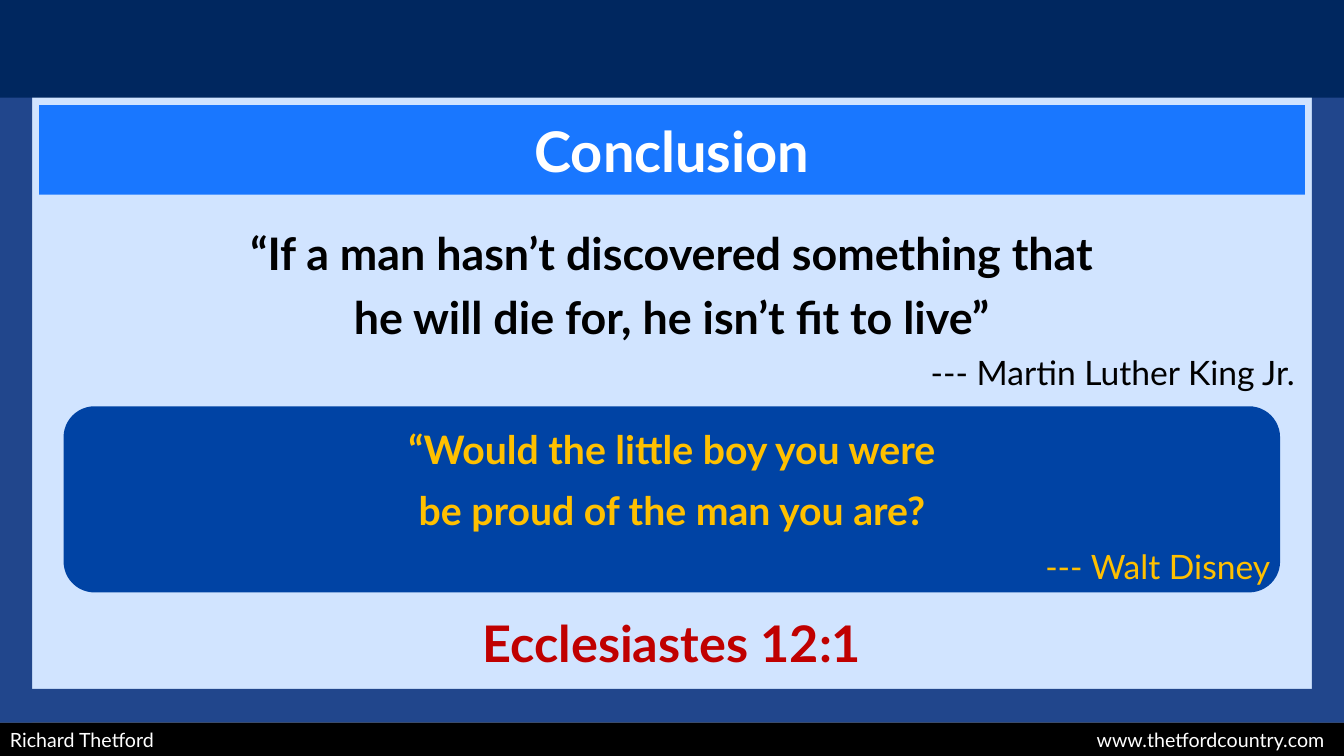
"""Build the conclusion slide with its quotations and scripture reference."""
from pptx import Presentation
from pptx.dml.color import RGBColor
from pptx.enum.shapes import MSO_SHAPE as Shape
from pptx.enum.text import MSO_ANCHOR as Anchor, MSO_AUTO_SIZE as AutoSize, PP_ALIGN as Align
from pptx.oxml import parse_xml
from pptx.oxml.ns import nsdecls
from pptx.util import Pt

WHITE = RGBColor(0xFF, 0xFF, 0xFF)
BLACK = RGBColor(0x00, 0x00, 0x00)
PALE_BLUE = RGBColor(0xD1, 0xE4, 0xFF)
FRAME_BLUE = RGBColor(0x21, 0x46, 0x8C)
NAVY = RGBColor(0x00, 0x27, 0x5F)
BRIGHT_BLUE = RGBColor(0x19, 0x77, 0xFF)
PANEL_BLUE = RGBColor(0x00, 0x43, 0xA4)
GOLD = RGBColor(0xFF, 0xC0, 0x00)
RED = RGBColor(0xC0, 0x00, 0x00)

WIDTH, HEIGHT = 960, 540
SIDE = 23
FOOTER_TOP = 516
FOOTER_TAB = 939
CONTENT_LEFT, CONTENT_WIDTH = 28, 904
PANEL = (45.4, 290.2, 869, 133)


def fill_solid(target, color):
    """Give a shape or background a solid fill."""
    target.fill.solid()
    target.fill.fore_color.rgb = color


def add_block(slide, kind, box, color):
    """Add a plain filled shape without outline or shadow."""
    shape = slide.shapes.add_shape(kind, *map(Pt, box))
    fill_solid(shape, color)
    shape.line.fill.background()
    shape.shadow.inherit = False
    return shape


def write_paragraph(paragraph, text, align, spacing=1.0, **font_values):
    """Write a paragraph and format each of its runs."""
    paragraph.text = text
    paragraph.alignment = align
    paragraph.line_spacing = spacing
    color = font_values.pop("color")
    for run in paragraph.runs:
        for name, value in {"name": "Lato", **font_values}.items():
            setattr(run.font, name, value)
        run.font.color.rgb = color


def add_text(slide, box):
    """Add a wrapping text box and return its text frame."""
    frame = slide.shapes.add_textbox(*map(Pt, box)).text_frame
    frame.word_wrap = True
    return frame


def add_quotation(slide, box, quotation, speaker, size, color, spacing):
    """Add a centred bold quotation with its speaker at the right."""
    frame = add_text(slide, box)
    write_paragraph(frame.paragraphs[0], quotation, Align.CENTER, spacing,
                    size=Pt(size), bold=True, color=color)
    write_paragraph(frame.add_paragraph(), f"--- {speaker}", Align.RIGHT, spacing,
                    size=Pt(24), bold=False, color=color)


def set_title(slide, text):
    """Place and format the title on its coloured bar."""
    title = slide.shapes.title
    box = (CONTENT_LEFT, 75, CONTENT_WIDTH, 64)
    for name, value in zip(("left", "top", "width", "height"), box):
        setattr(title, name, Pt(value))
    fill_solid(title, BRIGHT_BLUE)
    title.text_frame.auto_size = AutoSize.NONE
    title.text_frame.vertical_anchor = Anchor.MIDDLE
    write_paragraph(title.text_frame.paragraphs[0], text, Align.CENTER,
                    size=Pt(40), bold=True, color=WHITE)


def add_footer(slide, author, address):
    """Add the black footer with the address at a right tab."""
    footer = add_block(slide, Shape.RECTANGLE, (0, FOOTER_TOP, WIDTH, HEIGHT - FOOTER_TOP), BLACK)
    footer.text_frame.vertical_anchor = Anchor.MIDDLE
    paragraph = footer.text_frame.paragraphs[0]
    paragraph._p.get_or_add_pPr().append(parse_xml(
        f'<a:tabLst {nsdecls("a")}><a:tab pos="{Pt(FOOTER_TAB)}" algn="r"/></a:tabLst>'))
    write_paragraph(paragraph, f"{author}\t{address}", Align.LEFT, size=Pt(14), color=WHITE)


def main():
    """Build and save the presentation."""
    presentation = Presentation()
    presentation.slide_width, presentation.slide_height = Pt(WIDTH), Pt(HEIGHT)
    slide = presentation.slides.add_slide(presentation.slide_layouts[5])
    fill_solid(slide.background, PALE_BLUE)

    add_footer(slide, "Richard Thetford", "www.thetfordcountry.com")
    for box, color in (
        ((0, 0, SIDE, FOOTER_TOP), FRAME_BLUE),
        ((WIDTH - SIDE, 0, SIDE, FOOTER_TOP), FRAME_BLUE),
        ((0, 0, WIDTH, 69.7), NAVY),
        ((0, 492, WIDTH, FOOTER_TOP - 492), FRAME_BLUE),
    ):
        add_block(slide, Shape.RECTANGLE, box, color)

    set_title(slide, "Conclusion")
    add_quotation(slide, (CONTENT_LEFT, 149.8, CONTENT_WIDTH, 132.5),
                  "“If a man hasn’t discovered something that\nhe will die for, he isn’t fit to live”",
                  "Martin Luther King Jr.", 32, BLACK, 1.2)
    add_block(slide, Shape.ROUNDED_RECTANGLE, PANEL, PANEL_BLUE)
    add_quotation(slide, PANEL, "“Would the little boy you were\nbe proud of the man you are?",
                  "Walt Disney", 28, GOLD, 1.3)
    reference = add_text(slide, (SIDE, 433.4, WIDTH - 2 * SIDE, 51))
    write_paragraph(reference.paragraphs[0], "Ecclesiastes 12:1", Align.CENTER,
                    size=Pt(36), bold=True, color=RED)
    presentation.save("out.pptx")


if __name__ == "__main__":
    main()
